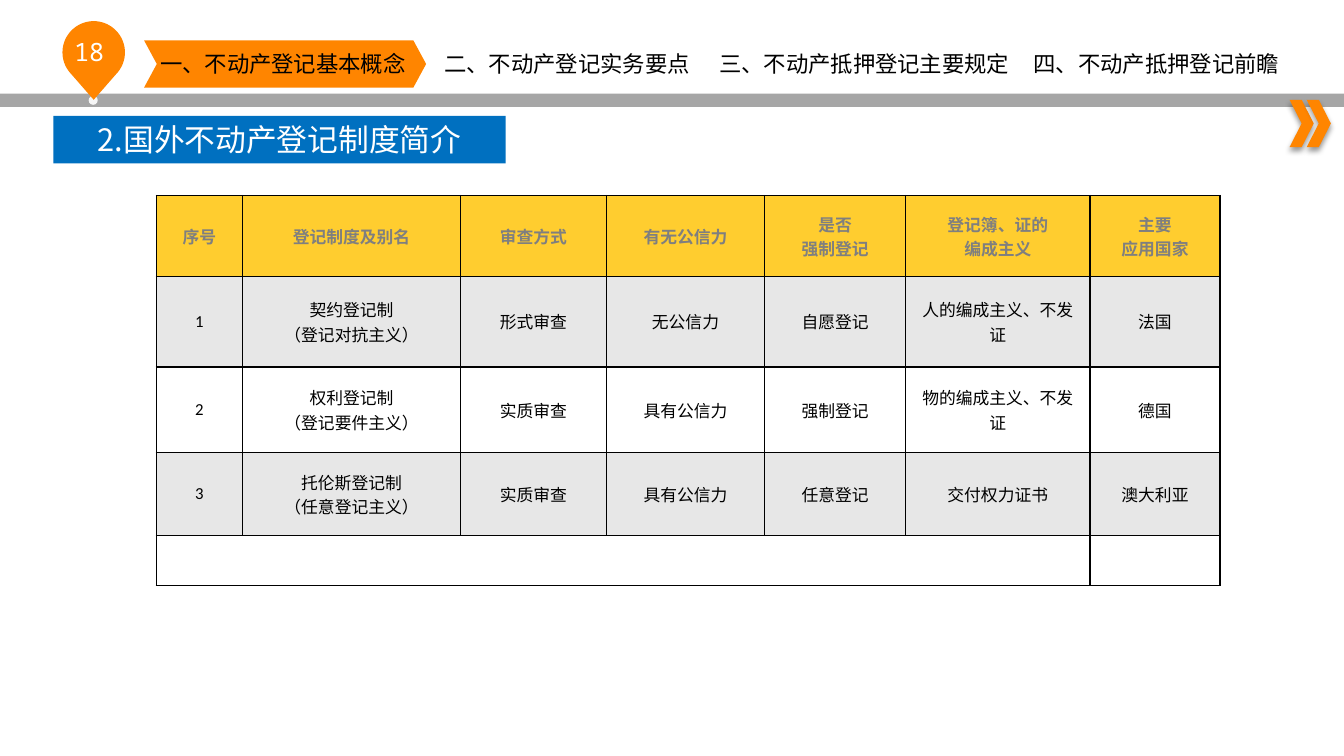
from dataclasses import dataclass
from math import cos, radians, sin

from lxml.etree import SubElement
from pptx import Presentation
from pptx.dml.color import RGBColor
from pptx.enum.shapes import MSO_SHAPE
from pptx.enum.text import MSO_ANCHOR, MSO_AUTO_SIZE, PP_ALIGN
from pptx.oxml import parse_xml
from pptx.oxml.ns import nsdecls, qn
from pptx.util import Emu, Pt

EMU_PER_PX = 9144  # 100 px to the inch


@dataclass(frozen=True)
class Theme:
    orange: str = "FF8500"
    blue: str = "0070C0"
    band: str = "A6A6A6"
    dot: str = "F6F6F6"
    header_fill: str = "FFCD2F"
    header_text: str = "7F7F7F"
    stripe: str = "E7E7E7"
    white: str = "FFFFFF"
    black: str = "000000"
    latin: str = "Calibri"
    chinese: str = "Noto Sans CJK SC"
    mono: str = "Noto Sans Mono"
    title_size: int = 22
    number_size: int = 18
    tab_size: int = 16
    table_size: int = 12


THEME = Theme()

# Text, left, width and alignment of each section tab
SECTION_TABS = [
    ("一、不动产登记基本概念", 159, 247, PP_ALIGN.LEFT),
    ("二、不动产登记实务要点", 441, 255, PP_ALIGN.LEFT),
    ("三、不动产抵押登记主要规定", 690, 336, PP_ALIGN.CENTER),
    ("四、不动产抵押登记前瞻", 1026, 259, PP_ALIGN.LEFT),
]
COLUMN_WIDTHS = [86, 216, 145, 157, 140, 183, 129]
ROW_HEIGHTS = [80, 90, 85, 82, 50]
REGISTRATION_SYSTEMS = [
    ["序号", "登记制度及别名", "审查方式", "有无公信力", "是否\n强制登记",
     "登记簿、证的\n编成主义", "主要\n应用国家"],
    ["1", "契约登记制\n（登记对抗主义）", "形式审查", "无公信力", "自愿登记",
     "人的编成主义、不发证", "法国"],
    ["2", "权利登记制\n（登记要件主义）", "实质审查", "具有公信力", "强制登记",
     "物的编成主义、不发证", "德国"],
    ["3", "托伦斯登记制\n（任意登记主义）", "实质审查", "具有公信力", "任意登记",
     "交付权力证书", "澳大利亚"],
    [""] * 7,
]


def px(value):
    return Emu(round(value * EMU_PER_PX))


def box(*lengths):
    return [px(length) for length in lengths]


def write_text(frame, text, *, size, color=THEME.black, font=THEME.latin,
               bold=False, align=PP_ALIGN.CENTER):
    for index, line in enumerate(text.split("\n")):
        paragraph = frame.add_paragraph() if index else frame.paragraphs[0]
        paragraph.alignment = align
        run = paragraph.add_run()
        run.text = line
        run.font.size = Pt(size)
        run.font.bold = bold
        run.font.color.rgb = RGBColor.from_string(color)
        run.font.name = font
        east_asian = SubElement(run.font._element, qn("a:ea"))
        east_asian.set("typeface", THEME.chinese)


def paint(shape, color):
    shape.fill.solid()
    shape.fill.fore_color.rgb = RGBColor.from_string(color)
    shape.line.fill.background()
    shape.shadow.inherit = False


def add_block(slide, kind, bounds, color):
    shape = slide.shapes.add_shape(kind, *box(*bounds))
    paint(shape, color)
    return shape


def add_label(slide, bounds, text, **text_format):
    frame = slide.shapes.add_textbox(*box(*bounds)).text_frame
    frame.word_wrap = True
    frame.vertical_anchor = MSO_ANCHOR.MIDDLE
    frame.margin_left = frame.margin_right = frame.margin_top = frame.margin_bottom = 0
    write_text(frame, text, **text_format)


def add_soft_shadow(shape):
    effects = shape._element.spPr.find(qn("a:effectLst"))
    effects.append(parse_xml(
        f'<a:outerShdw {nsdecls("a")} blurRad="50800" dist="38100" dir="5400000">'
        f'<a:srgbClr val="{THEME.black}"><a:alpha val="40000"/></a:srgbClr></a:outerShdw>'))


def add_pin(slide, center_x, center_y, radius, tip_y):
    """Round head, open over the lower quarter, closing to a point."""
    arc = [(px(center_x + radius * cos(radians(angle))),
            px(center_y + radius * sin(radians(angle))))
           for angle in range(45, -226, -5)]
    builder = slide.shapes.build_freeform(*arc[0])
    builder.add_line_segments(arc[1:] + [(px(center_x), px(tip_y))], close=True)
    paint(builder.convert_to_shape(), THEME.orange)


def add_cell_borders(cell):
    properties = cell._tc.get_or_add_tcPr()
    for side in ("lnL", "lnR", "lnT", "lnB"):
        properties.append(parse_xml(
            f'<a:{side} {nsdecls("a")} w="12700"><a:solidFill>'
            f'<a:srgbClr val="{THEME.black}"/></a:solidFill></a:{side}>'))


def add_systems_table(slide, left, top):
    table = slide.shapes.add_table(
        len(ROW_HEIGHTS), len(COLUMN_WIDTHS),
        *box(left, top, sum(COLUMN_WIDTHS), sum(ROW_HEIGHTS))).table
    table.horz_banding = False
    for column, width in zip(table.columns, COLUMN_WIDTHS):
        column.width = px(width)
    for row, height in zip(table.rows, ROW_HEIGHTS):
        row.height = px(height)
    for row_index, texts in enumerate(REGISTRATION_SYSTEMS):
        is_header = row_index == 0
        stripe = THEME.stripe if row_index % 2 else THEME.white
        for column_index, text in enumerate(texts):
            cell = table.cell(row_index, column_index)
            cell.vertical_anchor = MSO_ANCHOR.MIDDLE
            add_cell_borders(cell)
            cell.fill.solid()
            cell.fill.fore_color.rgb = RGBColor.from_string(
                THEME.header_fill if is_header else stripe)
            if text:
                write_text(cell.text_frame, text, size=THEME.table_size, bold=is_header,
                           color=THEME.header_text if is_header else THEME.black)
    last = len(ROW_HEIGHTS) - 1
    table.cell(last, 0).merge(table.cell(last, len(COLUMN_WIDTHS) - 2))


def set_title(slide, bounds, text):
    title = slide.shapes.title
    title.left, title.top, title.width, title.height = box(*bounds)
    title.fill.solid()
    title.fill.fore_color.rgb = RGBColor.from_string(THEME.blue)
    title.text_frame.auto_size = MSO_AUTO_SIZE.NONE
    title.text_frame.vertical_anchor = MSO_ANCHOR.MIDDLE
    write_text(title.text_frame, text, size=THEME.title_size,
               color=THEME.white, font=THEME.chinese)


def main():
    presentation = Presentation()
    presentation.slide_width, presentation.slide_height = box(1334, 750)
    slide = presentation.slides.add_slide(presentation.slide_layouts[5])

    # Header band and double arrow
    add_block(slide, MSO_SHAPE.RECTANGLE, (0, 93, 1334, 13), THEME.band)
    for left in (1280, 1297):
        add_soft_shadow(add_block(slide, MSO_SHAPE.CHEVRON, (left, 99, 24, 47), THEME.orange))

    # Page number pin
    add_block(slide, MSO_SHAPE.OVAL, (88, 95, 9, 9), THEME.dot)
    add_pin(slide, 93, 52, 31, 99)
    add_label(slide, (45, 31, 87, 40), "18", size=THEME.number_size,
              color=THEME.white, font=THEME.mono)

    # Section tabs, the first one active
    active_tab = add_block(slide, MSO_SHAPE.CHEVRON, (143, 40, 280, 47), THEME.orange)
    active_tab.adjustments[0] = 0.27
    for text, left, width, align in SECTION_TABS:
        add_label(slide, (left, 50, width, 27), text, size=THEME.tab_size, align=align)

    # Title and comparison table
    set_title(slide, (53, 115, 449, 47), "2.国外不动产登记制度简介")
    add_systems_table(slide, 155, 194)

    presentation.save("out.pptx")


if __name__ == "__main__":
    main()
